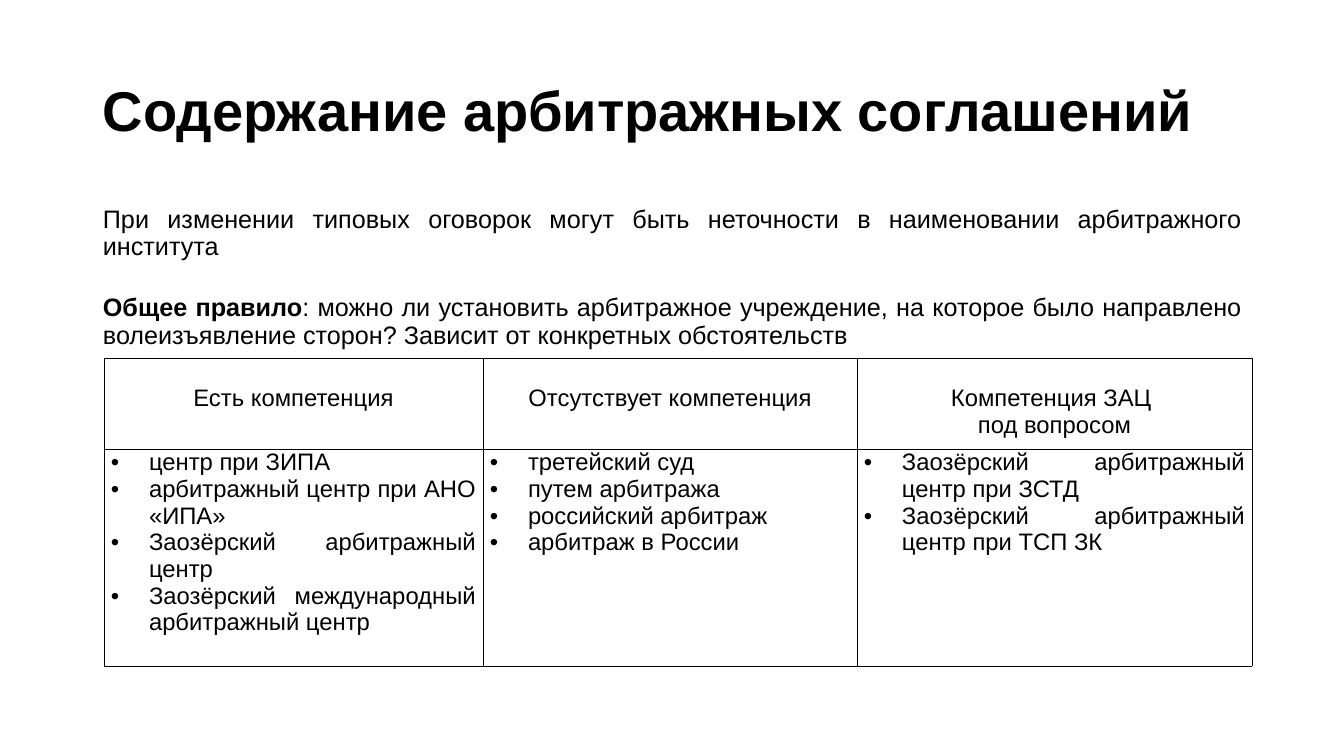
from dataclasses import dataclass

from lxml import etree
from pptx import Presentation
from pptx.dml.color import RGBColor
from pptx.enum.text import MSO_ANCHOR, PP_ALIGN
from pptx.oxml.ns import qn
from pptx.util import Pt

EMU_PER_PX = 12192000 / 1344


@dataclass(frozen=True)
class Theme:
    font: str = "Arial"
    ink: str = "000000"
    title: int = 40
    body: int = 18
    table: int = 17
    border: float = 0.5


THEME = Theme()

TITLE = "Содержание арбитражных соглашений"
INTRO = [
    [("При изменении типовых оговорок могут быть неточности в наименовании "
      "арбитражного института", False)],
    [("Общее правило", True),
     (": можно ли установить арбитражное учреждение, на которое было направлено "
      "волеизъявление сторон? Зависит от конкретных обстоятельств", False)],
]
# Width in px, heading, alignment of the list, list items
COLUMNS = [
    (379, "Есть компетенция", PP_ALIGN.JUSTIFY,
     ["центр при ЗИПА", "арбитражный центр при АНО «ИПА»",
      "Заозёрский арбитражный центр", "Заозёрский международный арбитражный центр"]),
    (374, "Отсутствует компетенция", PP_ALIGN.LEFT,
     ["третейский суд", "путем арбитража", "российский арбитраж", "арбитраж в России"]),
    (395, "Компетенция ЗАЦ \vпод вопросом", PP_ALIGN.JUSTIFY,
     ["Заозёрский арбитражный центр при ЗСТД",
      "Заозёрский арбитражный центр при ТСП ЗК"]),
]
HEADER_HEIGHT, LIST_HEIGHT = 91, 217


def px(n):
    return round(n * EMU_PER_PX)


def style_run(r, size, bold=False):
    r.font.name = THEME.font
    r.font.size = Pt(size)
    r.font.bold = bold
    r.font.color.rgb = RGBColor.from_string(THEME.ink)


def add_text_frame(slide, box):
    tf = slide.shapes.add_textbox(*map(px, box)).text_frame
    tf.word_wrap = True
    return tf


def add_title(slide, box):
    tf = add_text_frame(slide, box)
    tf.vertical_anchor = MSO_ANCHOR.MIDDLE
    tf.text = TITLE
    p = tf.paragraphs[0]
    p.line_spacing = 0.9
    style_run(p.runs[0], THEME.title, bold=True)


def add_intro(slide, box):
    tf = add_text_frame(slide, box)
    for i, parts in enumerate(INTRO):
        p = tf.add_paragraph() if i else tf.paragraphs[0]
        p.alignment = PP_ALIGN.JUSTIFY
        p.line_spacing = 0.9
        p.space_before = Pt(20 if i else 4)
        p.space_after = Pt(4)
        for text, bold in parts:
            r = p.add_run()
            r.text = text
            style_run(r, THEME.body, bold)


def add_bullet(p):
    pPr = p._p.get_or_add_pPr()
    pPr.set("marL", str(px(38)))
    pPr.set("indent", str(-px(38)))
    etree.SubElement(pPr, qn("a:buFont"), typeface=THEME.font)
    etree.SubElement(pPr, qn("a:buChar"), char="•")


def add_borders(cell):
    tcPr = cell._tc.get_or_add_tcPr()
    for i, side in enumerate(("lnL", "lnR", "lnT", "lnB")):
        ln = etree.Element(qn(f"a:{side}"), w=str(Pt(THEME.border)))
        fill = etree.SubElement(ln, qn("a:solidFill"))
        etree.SubElement(fill, qn("a:srgbClr"), val=THEME.ink)
        tcPr.insert(i, ln)


def fill_cell(cell, text, align, top=0, bullets=False):
    cell.fill.background()
    add_borders(cell)
    cell.margin_left = cell.margin_right = px(7)
    cell.margin_top, cell.margin_bottom = px(top), 0
    tf = cell.text_frame
    tf.text = text
    for p in tf.paragraphs:
        p.alignment = align
        if bullets:
            add_bullet(p)
        for r in p.runs:
            style_run(r, THEME.table)


def add_competence_table(slide, left, top):
    width = sum(column[0] for column in COLUMNS)
    box = (left, top, width, HEADER_HEIGHT + LIST_HEIGHT)
    table = slide.shapes.add_table(2, len(COLUMNS), *map(px, box)).table
    table.first_row = table.horz_banding = False
    table.rows[0].height = px(HEADER_HEIGHT)
    table.rows[1].height = px(LIST_HEIGHT)
    for i, (column_width, heading, align, items) in enumerate(COLUMNS):
        table.columns[i].width = px(column_width)
        fill_cell(table.cell(0, i), heading, PP_ALIGN.CENTER, top=27)
        fill_cell(table.cell(1, i), "\n".join(items), align, bullets=True)


def main():
    prs = Presentation()
    prs.slide_width, prs.slide_height = px(1344), px(756)
    slide = prs.slides.add_slide(prs.slide_layouts[6])
    add_title(slide, (93, 40, 1159, 146))
    add_intro(slide, (93, 202, 1159, 480))
    add_competence_table(slide, 104, 358)
    prs.save("out.pptx")


if __name__ == "__main__":
    main()
